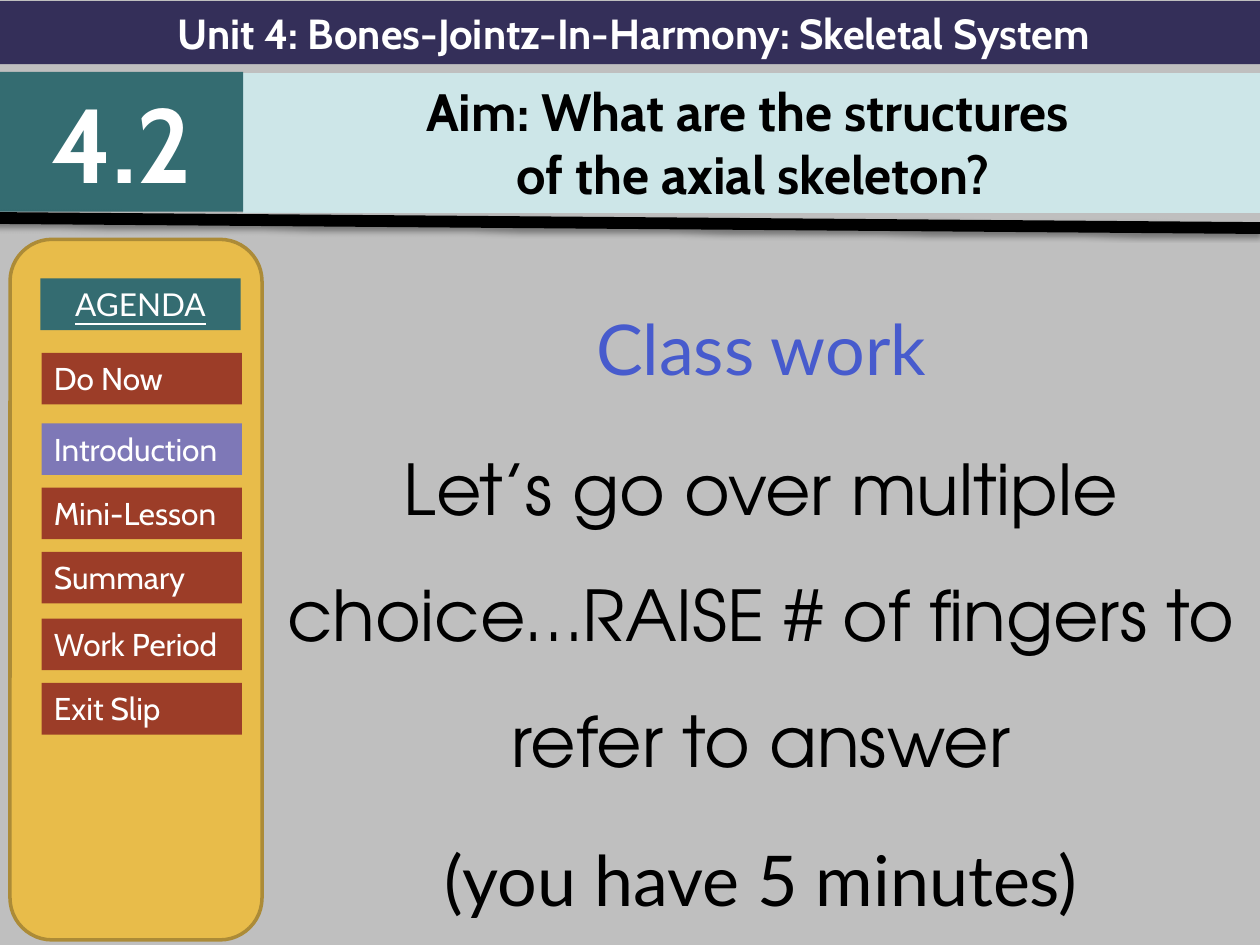
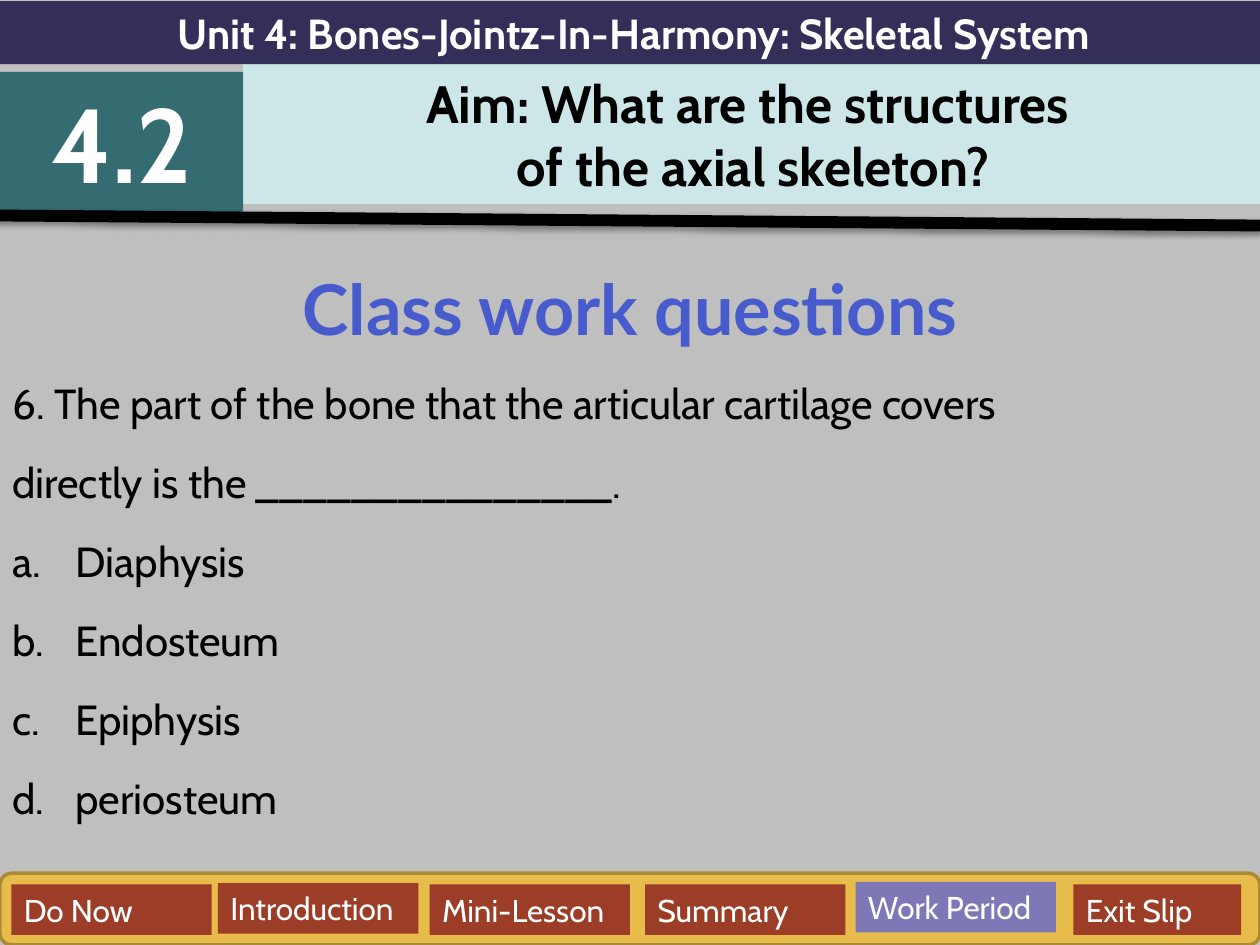
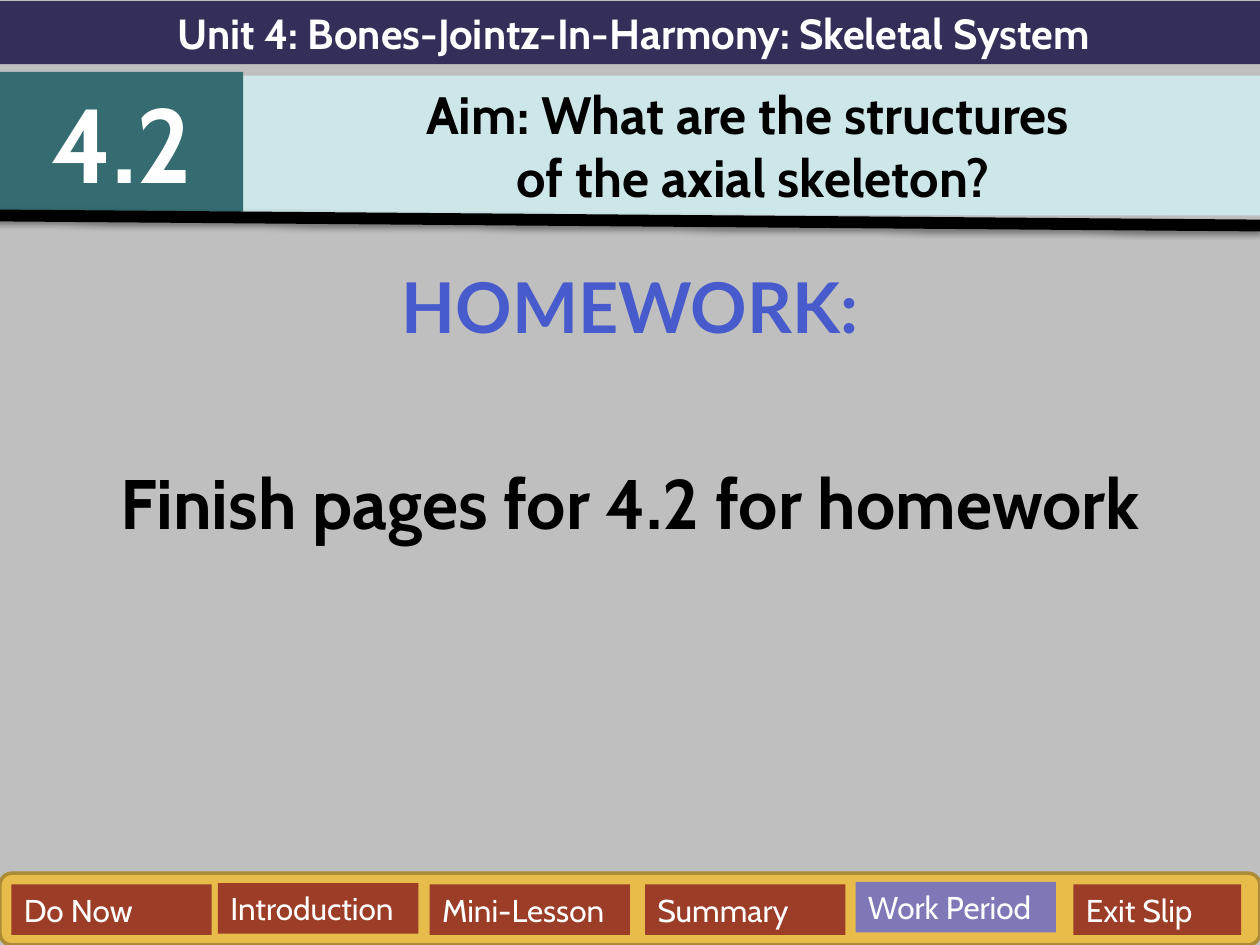
from dataclasses import dataclass
from typing import NamedTuple

from lxml import etree
from pptx import Presentation
from pptx.dml.color import RGBColor
from pptx.enum import shapes, text
from pptx.oxml import ns
from pptx.util import Emu, Pt

PX_PER_INCH = 100
EMU_PER_PX = 914400 // PX_PER_INCH
LEFT, CENTER = text.PP_ALIGN.LEFT, text.PP_ALIGN.CENTER


@dataclass(frozen=True)
class Theme:
    background: str = "BFBFBF"
    navy: str = "342F59"
    teal: str = "346C71"
    pale: str = "CDE6E8"
    gold: str = "E8BC4A"
    gold_edge: str = "AC8B37"
    rust: str = "9C3D28"
    violet: str = "7E78B7"
    blue: str = "475BCD"
    black: str = "000000"
    white: str = "FFFFFF"
    main_font: str = "Cabin"
    heading_font: str = "Lato"
    round_font: str = "TeX Gyre Adventor"
    tab_size: int = 18
    body_size: int = 24
    aim_size: int = 30
    heading_size: int = 40
    number_size: int = 60
    panel_line: float = 2
    rule_line: float = 6.75


T = Theme()


class Box(NamedTuple):
    x: int
    y: int
    w: int
    h: int

    def emu(self) -> list[Emu]:
        return [px(n) for n in self]


class Style(NamedTuple):
    size: int
    color: str
    font: str = T.main_font
    bold: bool = False
    underline: bool = False


class Para(NamedTuple):
    text: str
    style: Style
    align: text.PP_ALIGN = CENTER
    spacing: float = 1.0
    before: float = 0
    lettered: bool = False


class Tab(NamedTuple):
    label: str
    box: Box


class Agenda(NamedTuple):
    panel: Box
    tabs: list[Tab]
    current: str


class Lesson(NamedTuple):
    aim_y: int
    rule_y: int
    body_box: Box
    body: list[Para]
    agenda: Agenda


UNIT = Style(T.body_size, T.white, bold=True)
NUMBER = Style(T.number_size, T.white, bold=True)
AIM = Style(T.aim_size, T.black, bold=True)
TAB = Style(T.tab_size, T.white)
AGENDA_HEAD = Style(T.tab_size, T.white, T.heading_font, underline=True)
HEADING = Style(T.heading_size, T.blue, T.heading_font)
BOLD_HEADING = HEADING._replace(bold=True)
QUESTION = Style(T.body_size, T.black)

AIM_LINES = ["Aim: What are the structures ", "of the axial skeleton?"]
TAB_NAMES = ["Do Now", "Introduction", "Mini-Lesson", "Summary", "Work Period", "Exit Slip"]
SIDE_TOPS = [280, 336, 387, 438, 491, 542]
FOOT_PLACES = [(9, 702, 159), (173, 701, 159), (341, 702, 159),
               (512, 702, 159), (679, 700, 159), (852, 702, 133)]

SIDE_TABS = [Tab(name, Box(33, y, 159, 41)) for name, y in zip(TAB_NAMES, SIDE_TOPS)]
FOOT_TABS = [Tab(name, Box(x, y, w, 40)) for name, (x, y, w) in zip(TAB_NAMES, FOOT_PLACES)]
SIDE_AGENDA = Agenda(Box(8, 190, 200, 556), SIDE_TABS, "Introduction")
FOOT_AGENDA = Agenda(Box(0, 693, 1000, 57), FOOT_TABS, "Work Period")


def px(n: int) -> Emu:
    return Emu(n * EMU_PER_PX)


def rgb(color: str) -> RGBColor:
    return RGBColor.from_string(color)


def write(tf, paras: list[Para]) -> None:
    tf.word_wrap = True
    tf.auto_size = text.MSO_AUTO_SIZE.NONE
    tf.vertical_anchor = text.MSO_ANCHOR.TOP
    for i, para in enumerate(paras):
        p = tf.add_paragraph() if i else tf.paragraphs[0]
        p.alignment = para.align
        p.line_spacing = para.spacing
        p.space_before = Pt(para.before)
        if para.lettered:
            pPr = p._p.get_or_add_pPr()
            pPr.set("marL", str(px(50)))
            pPr.set("indent", str(px(-50)))
            etree.SubElement(pPr, ns.qn("a:buFont"), typeface="+mj-lt")
            etree.SubElement(pPr, ns.qn("a:buAutoNum"), type="alphaLcPeriod")
        r = p.add_run()
        r.text = para.text
        f, style = r.font, para.style
        f.name, f.size, f.bold, f.underline = style.font, Pt(style.size), style.bold, style.underline
        f.color.rgb = rgb(style.color)


def add_band(s, box: Box, fill: str, para: Para) -> None:
    sp = s.shapes.add_shape(shapes.MSO_SHAPE.RECTANGLE, *box.emu())
    sp.shadow.inherit = False
    sp.fill.solid()
    sp.fill.fore_color.rgb = rgb(fill)
    sp.line.fill.background()
    write(sp.text_frame, [para])


def add_aim(s, y: int) -> None:
    sp = s.shapes.title
    sp.left, sp.top, sp.width, sp.height = Box(193, y, 810, 111).emu()
    sp.fill.solid()
    sp.fill.fore_color.rgb = rgb(T.pale)
    write(sp.text_frame, [Para(line, AIM) for line in AIM_LINES])


def add_rule(s, y: int) -> None:
    rule = s.shapes.add_connector(shapes.MSO_CONNECTOR.STRAIGHT, px(-5), px(y), px(1000), px(y + 8))
    rule.line.color.rgb = rgb(T.black)
    rule.line.width = Pt(T.rule_line)
    effects = etree.SubElement(rule._element.spPr, ns.qn("a:effectLst"))
    shadow = etree.SubElement(effects, ns.qn("a:outerShdw"), blurRad=str(Pt(3.1)),
                              dist=str(Pt(1.6)), dir="5400000", rotWithShape="0")
    color = etree.SubElement(shadow, ns.qn("a:srgbClr"), val=T.black)
    etree.SubElement(color, ns.qn("a:alpha"), val="38000")


def add_agenda(s, agenda: Agenda) -> None:
    panel = s.shapes.add_shape(shapes.MSO_SHAPE.ROUNDED_RECTANGLE, *agenda.panel.emu())
    panel.shadow.inherit = False
    panel.fill.solid()
    panel.fill.fore_color.rgb = rgb(T.gold)
    panel.line.color.rgb = rgb(T.gold_edge)
    panel.line.width = Pt(T.panel_line)
    for tab in agenda.tabs:
        fill = T.violet if tab.label == agenda.current else T.rust
        add_band(s, tab.box, fill, Para(tab.label, TAB, LEFT))


def add_lesson(prs, lesson: Lesson):
    s = prs.slides.add_slide(prs.slide_layouts[5])
    add_aim(s, lesson.aim_y)
    body = s.shapes.add_textbox(*lesson.body_box.emu())
    write(body.text_frame, lesson.body)
    add_band(s, Box(0, 1, 1006, 50), T.navy,
             Para("Unit 4: Bones-Jointz-In-Harmony: Skeletal System", UNIT))
    add_band(s, Box(0, 57, 193, 111), T.teal, Para("4.2", NUMBER))
    add_rule(s, lesson.rule_y)
    add_agenda(s, lesson.agenda)
    return s


def class_work() -> Lesson:
    adventor = Style(T.heading_size, T.black, T.round_font)
    lato = Style(T.heading_size, T.black, T.heading_font)
    lines = [("Class work", HEADING),
             ("Let’s go over multiple choice…RAISE # of fingers to refer to answer", adventor),
             ("(you have 5 minutes)", lato)]
    body = [Para(line, style, spacing=1.5, before=8) for line, style in lines]
    return Lesson(58, 173, Box(208, 204, 792, 546), body, SIDE_AGENDA)


def questions() -> Lesson:
    stem = ["6. The part of the bone that the articular cartilage covers",
            "directly is the _______________."]
    choices = ["Diaphysis", "Endosteum", "Epiphysis", "periosteum"]
    body = [Para("Class work questions", BOLD_HEADING, spacing=1.4, before=8)]
    body += [Para(line, QUESTION, LEFT, 1.4, 4.8, line in choices) for line in stem + choices]
    return Lesson(51, 171, Box(0, 179, 1000, 515), body, FOOT_AGENDA)


def homework() -> Lesson:
    task = Style(T.heading_size, T.black, bold=True)
    body = [Para("HOMEWORK:", BOLD_HEADING, before=8),
            Para("Finish pages for 4.2 for homework", task, before=64)]
    return Lesson(60, 171, Box(0, 204, 1000, 546), body, FOOT_AGENDA)


def main() -> None:
    prs = Presentation()
    prs.slide_width, prs.slide_height = px(1000), px(750)
    fill = prs.slide_master.background.fill
    fill.solid()
    fill.fore_color.rgb = rgb(T.background)
    s = add_lesson(prs, class_work())
    add_band(s, Box(32, 221, 159, 41), T.teal, Para("AGENDA", AGENDA_HEAD))
    add_lesson(prs, questions())
    add_lesson(prs, homework())
    prs.save("out.pptx")


if __name__ == "__main__":
    main()
